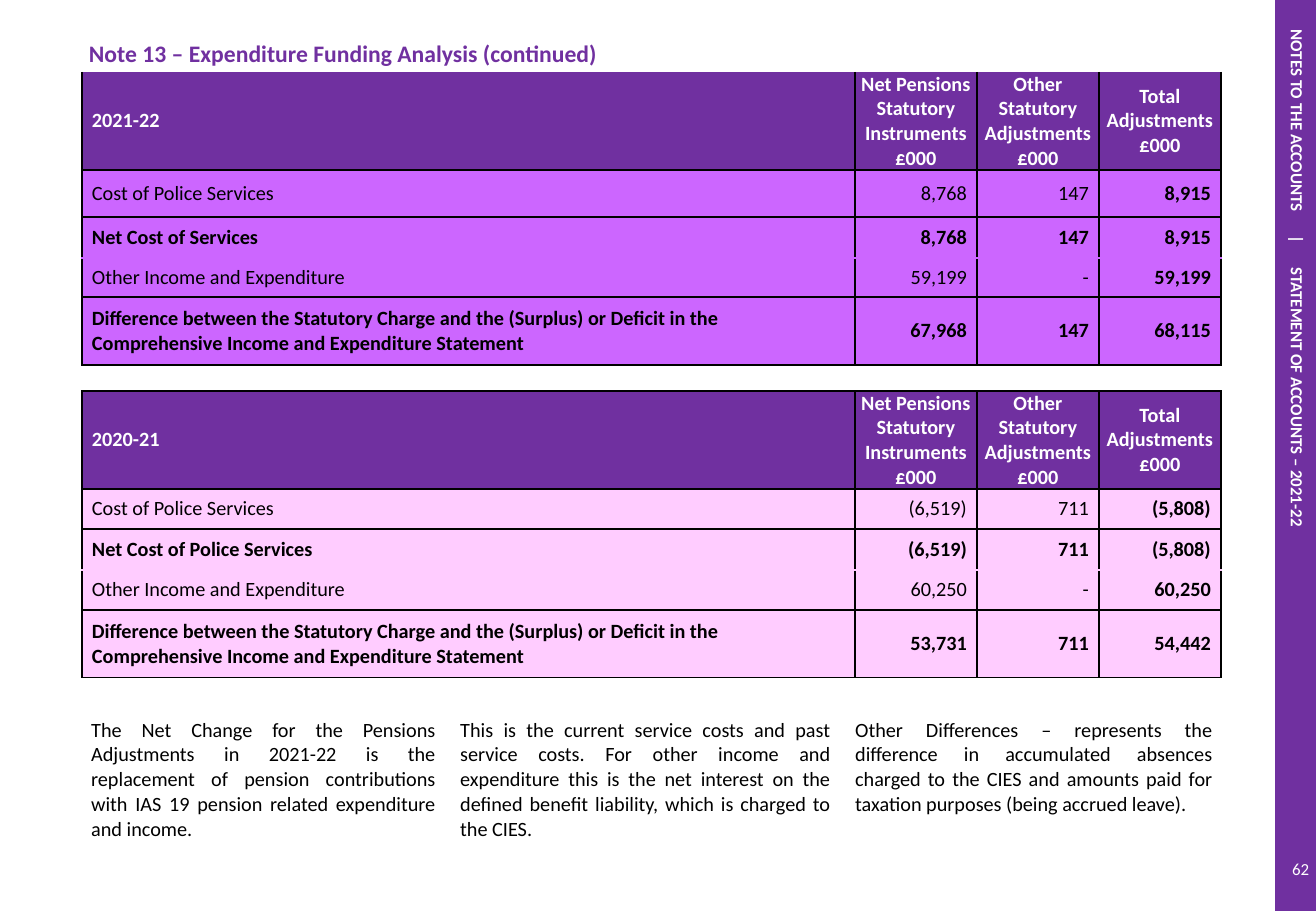
from lxml import etree
from pptx import Presentation
from pptx.dml.color import RGBColor
from pptx.enum.shapes import MSO_SHAPE
from pptx.enum.text import MSO_ANCHOR, PP_ALIGN
from pptx.oxml.ns import qn
from pptx.util import Pt

PX = 914400 / 121.5
PURPLE = RGBColor(0x70, 0x30, 0xA0)
VIOLET = RGBColor(0xCC, 0x66, 0xFF)
PINK = RGBColor(0xFF, 0xCC, 0xFF)
WHITE = RGBColor(0xFF, 0xFF, 0xFF)
BLACK = RGBColor(0, 0, 0)
RECTANGLE = MSO_SHAPE.RECTANGLE
MIDDLE = MSO_ANCHOR.MIDDLE
LEFT, CENTER, RIGHT, JUSTIFY = PP_ALIGN.LEFT, PP_ALIGN.CENTER, PP_ALIGN.RIGHT, PP_ALIGN.JUSTIFY
NO_STYLE = "{2D5ABB26-0587-4C30-8999-92F81FD0307C}"
LABEL_SPAN = 4
MARGIN = round(10 * PX)


def write(frame, text, size=12, color=BLACK, bold=False, align=LEFT, after=0):
    frame.word_wrap = True
    para = frame.paragraphs[0]
    para.alignment = align
    para.space_after = Pt(after)
    span = para.add_run()
    span.text = text
    span.font.name = "Calibri"
    span.font.size = Pt(size)
    span.font.bold = bold
    span.font.color.rgb = color
    return para


def set_borders(cell, **sides):
    """Draw 1 pt lines; each side (L, R, T, B) is given its colour."""
    props = cell._tc.get_or_add_tcPr()
    for position, (side, color) in enumerate(sides.items()):
        line = etree.Element(qn(f"a:ln{side}"), w=str(Pt(1)))
        fill = etree.SubElement(line, qn("a:solidFill"))
        etree.SubElement(fill, qn("a:srgbClr"), val=str(color))
        props.insert(position, line)


deck = Presentation()
deck.slide_width = round(1316 * PX)
deck.slide_height = round(911 * PX)
page = deck.slides.add_slide(deck.slide_layouts[6])

# Sidebar with section name and page number
sidebar = page.shapes.add_shape(RECTANGLE, *(round(n * PX) for n in (1275, 0, 45, 913)))
sidebar.shadow.inherit = False
sidebar.fill.solid()
sidebar.fill.fore_color.rgb = PURPLE
sidebar.line.fill.background()
sidebar.text_frame.vertical_anchor = MIDDLE
sidebar.text_frame._txBody.bodyPr.set("vert", "vert")
para = write(sidebar.text_frame, "\tNOTES TO THE ACCOUNTS\t|\tSTATEMENT OF ACCOUNTS – 2021-22",
             size=10, color=WHITE, bold=True)
tabs = etree.SubElement(para._p.get_or_add_pPr(), qn("a:tabLst"))
for stop in (18, 224, 256):
    etree.SubElement(tabs, qn("a:tab"), pos=str(round(stop * PX)), algn="l")

number_box = page.shapes.add_textbox(*(round(n * PX) for n in (1275, 844, 46, 49)))
number_box.text_frame.vertical_anchor = MIDDLE
write(number_box.text_frame, "62", size=10, color=WHITE, align=RIGHT)

title_box = page.shapes.add_textbox(*(round(n * PX) for n in (77, 33, 815, 41)))
write(title_box.text_frame, "Note 13 – Expenditure Funding Analysis (continued)",
      size=14, color=PURPLE, bold=True)

# Both tables start plain
notes_widths, notes_heights = [369, 395, 382], [142]
funding_widths = [136, 133, 132, 372, 122, 122, 122]
funding_heights = [98, 47, 41, 39, 68, 26, 98, 40, 41, 40, 68]
tables = []
for left, top, widths, heights in ((79, 712, notes_widths, notes_heights),
                                   (82, 72, funding_widths, funding_heights)):
    holder = page.shapes.add_table(len(heights), len(widths), round(left * PX), round(top * PX),
                                   round(sum(widths) * PX), round(sum(heights) * PX))
    table = holder.table
    table.first_row = table.horz_banding = False
    table._tbl.tblPr.find(qn("a:tableStyleId")).text = NO_STYLE
    for column, width in zip(table.columns, widths):
        column.width = round(width * PX)
    for row, height in zip(table.rows, heights):
        row.height = round(height * PX)
    tables.append(table)
notes, funding = tables

NOTES = [
    "The Net Change for the Pensions Adjustments in 2021-22 is the replacement of pension "
    "contributions with IAS 19 pension related expenditure and income.",
    "This is the current service costs and past service costs. For other income and expenditure "
    "this is the net interest on the defined benefit liability, which is charged to the CIES.",
    "Other Differences – represents the difference in accumulated absences charged to the CIES "
    "and amounts paid for taxation purposes (being accrued leave).",
]
for cell, text in zip(notes.rows[0].cells, NOTES):
    cell.fill.background()
    write(cell.text_frame, text, align=JUSTIFY, after=6)

# Funding analysis: one block a year, with an empty row between
HEADINGS = ["Net Pensions Statutory Instruments £000", "Other Statutory Adjustments £000",
            "Total Adjustments £000"]
DIFFERENCE = ("Difference between the Statutory Charge and the (Surplus) or Deficit in the "
              "Comprehensive Income and Expenditure Statement")
YEARS = [
    (0, VIOLET, [
        ["2021-22", *HEADINGS],
        ["Cost of Police Services", "8,768", "147", "8,915"],
        ["Net Cost of Services", "8,768", "147", "8,915"],
        ["Other Income and Expenditure", "59,199", "-", "59,199"],
        [DIFFERENCE, "67,968", "147", "68,115"],
    ]),
    (6, PINK, [
        ["2020-21", *HEADINGS],
        ["Cost of Police Services", "(6,519)", "711", "(5,808)"],
        ["Net Cost of Police Services", "(6,519)", "711", "(5,808)"],
        ["Other Income and Expenditure", "60,250", "-", "60,250"],
        [DIFFERENCE, "53,731", "711", "54,442"],
    ]),
]
for first_row, tint, lines in YEARS:
    for index, line in enumerate(lines):
        cells = list(funding.rows[first_row + index].cells)
        header = index == 0
        sides = {"L": BLACK, "R": BLACK, "T": BLACK, "B": BLACK}
        if first_row + index == 0:
            del sides["T"]
        elif index == 2:
            sides["B"] = tint
        elif index == 3:
            sides["T"] = tint
        for cell in cells:
            cell.fill.solid()
            cell.fill.fore_color.rgb = PURPLE if header else tint
            set_borders(cell, **sides)
        cells[0].merge(cells[LABEL_SPAN - 1])
        for position, (cell, text) in enumerate(zip([cells[0], *cells[LABEL_SPAN:]], line)):
            label = position == 0
            cell.vertical_anchor = MIDDLE
            cell.margin_top = cell.margin_bottom = 0
            cell.margin_left = MARGIN if label else 0
            cell.margin_right = 0 if header and not label else MARGIN
            write(cell.text_frame, text, color=WHITE if header else BLACK,
                  bold=index in (0, 2, 4) or position == 3,
                  align=LEFT if label else CENTER if header else RIGHT)

for cell in funding.rows[5].cells:
    cell.margin_top = cell.margin_bottom = 0
    cell.fill.background()
    set_borders(cell, T=BLACK, B=BLACK)
    etree.SubElement(cell.text_frame.paragraphs[0]._p, qn("a:endParaRPr"), sz="800")

deck.save("out.pptx")
